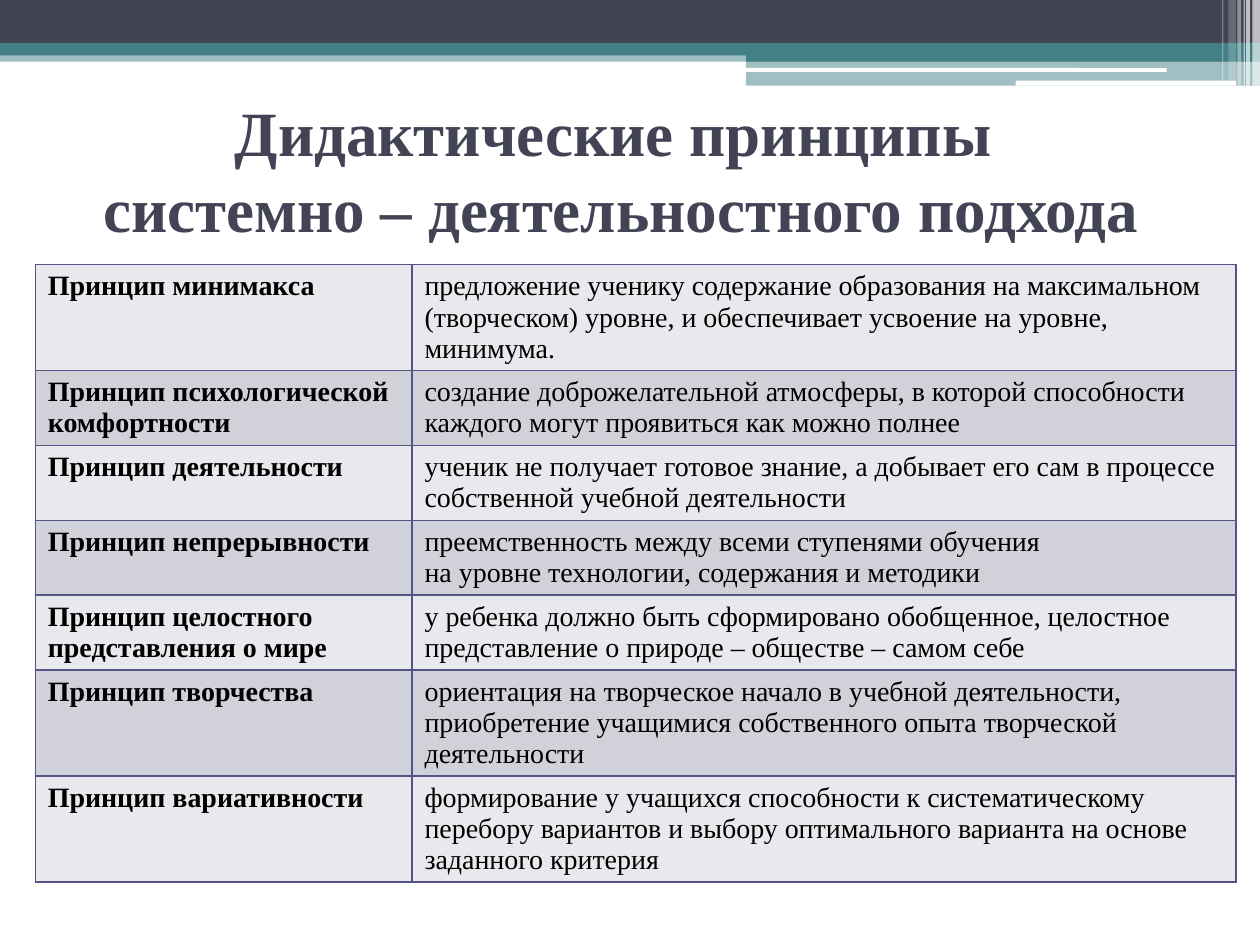
from lxml.etree import SubElement
from pptx import Presentation
from pptx.dml.color import RGBColor
from pptx.enum.shapes import MSO_SHAPE as Shape
from pptx.enum.text import MSO_ANCHOR as Anchor, MSO_AUTO_SIZE as Fit, PP_ALIGN as Align
from pptx.oxml.ns import qn
from pptx.util import Inches, Pt

FONT = "Times New Roman"
DARK = RGBColor(0x42, 0x44, 0x56)
TEAL = RGBColor(0x43, 0x80, 0x86)
WHITE = RGBColor(0xFF, 0xFF, 0xFF)
BLACK = RGBColor(0x00, 0x00, 0x00)
EDGE = RGBColor(0x53, 0x54, 0x8A)
STRIPES = (RGBColor(0xE9, 0xE9, 0xED), RGBColor(0xD1, 0xD1, 0xDA))

TITLE = ("Дидактические принципы ", "системно – деятельностного подхода")

# Each principle: its name, then the paragraphs that explain it
RULES = [
    ("Принцип минимакса",
     ["предложение ученику содержание образования на максимальном (творческом) уровне, "
      "и обеспечивает усвоение на уровне, минимума."]),
    ("Принцип психологической комфортности",
     ["создание доброжелательной атмосферы, в которой способности каждого могут "
      "проявиться как можно полнее"]),
    ("Принцип деятельности",
     ["ученик не получает готовое знание, а добывает его сам в процессе собственной "
      "учебной деятельности"]),
    ("Принцип непрерывности",
     ["преемственность между всеми ступенями обучения",
      "на уровне технологии, содержания и методики"]),
    ("Принцип целостного представления о мире",
     ["у ребенка должно быть сформировано обобщенное, целостное представление о природе "
      "– обществе – самом себе"]),
    ("Принцип творчества",
     ["ориентация на творческое начало в учебной деятельности, приобретение учащимися "
      "собственного опыта творческой деятельности"]),
    ("Принцип вариативности",
     ["формирование у учащихся способности к систематическому перебору вариантов и выбору "
      "оптимального варианта на основе заданного критерия"]),
]

# Left, top, width, height, colour, opacity in percent
BANDS = [
    (0, 0.4, 10, 0.09, TEAL, 50),
    (0, 0, 10, 0.34, DARK, 100),
    (0, 0.34, 10, 0.1, TEAL, 100),
    (5.92, 0.39, 4.08, 0.1, TEAL, 100),
    (5.92, 0.48, 4.08, 0.2, TEAL, 50),
]
LINES = [
    (5.91, 0.54, 3.35, 0.03, WHITE, 100),
    (8.06, 0.64, 1.75, 0.04, WHITE, 100),
]
# Left, width, height, opacity of the upright strips
STRIPS = [
    (9.94, 0.06, 0.68, 65),
    (9.89, 0.03, 0.68, 65),
    (9.87, 0.01, 0.68, 60),
    (9.82, 0.03, 0.68, 40),
    (9.75, 0.06, 0.64, 20),
    (9.7, 0.01, 0.64, 30),
]


def add_bar(slide, kind, left, top, width, height, color, alpha):
    bar = slide.shapes.add_shape(
        kind, Inches(left), Inches(top), Inches(width), Inches(height))
    bar.shadow.inherit = False
    bar.line.fill.background()
    bar.fill.solid()
    bar.fill.fore_color.rgb = color
    if alpha < 100:
        tint = bar.fill._xPr.find(qn("a:solidFill"))[0]
        SubElement(tint, qn("a:alpha"), val=str(alpha * 1000))


def add_header(slide, x, y):
    """Place the decorative bands with their top left corner at x, y."""
    strips = [(left, 0, width, height, WHITE, alpha)
              for left, width, height, alpha in STRIPS]
    groups = [(Shape.RECTANGLE, BANDS), (Shape.ROUNDED_RECTANGLE, LINES),
              (Shape.RECTANGLE, strips)]
    for kind, bars in groups:
        for left, top, *rest in bars:
            add_bar(slide, kind, x + left, y + top, *rest)


def add_run(para, text, size, color, bold):
    run = para.add_run()
    run.text = text
    font = run.font
    font.name, font.size, font.bold = FONT, Pt(size), bold
    font.color.rgb = color


def add_title(slide, x, y, width, height):
    title = slide.shapes.title
    title.left, title.top = Inches(x), Inches(y)
    title.width, title.height = Inches(width), Inches(height)
    frame = title.text_frame
    frame.word_wrap = True
    frame.auto_size = Fit.NONE
    frame.vertical_anchor = Anchor.MIDDLE
    para = frame.paragraphs[0]
    para.alignment = Align.CENTER
    for i, line in enumerate(TITLE):
        if i:
            para.add_line_break()
        add_run(para, line, 36, DARK, True)


def set_edges(cell):
    props = cell._tc.get_or_add_tcPr()
    for side in ("lnL", "lnR", "lnT", "lnB"):
        line = SubElement(props, qn(f"a:{side}"), w=str(Pt(1)))
        fill = SubElement(line, qn("a:solidFill"))
        SubElement(fill, qn("a:srgbClr"), val=str(EDGE))


def fill_cell(cell, texts, color, bold):
    set_edges(cell)
    cell.fill.solid()
    cell.fill.fore_color.rgb = color
    frame = cell.text_frame
    for i, text in enumerate(texts):
        para = frame.add_paragraph() if i else frame.paragraphs[0]
        add_run(para, text, 16, BLACK, bold)


def add_rules(slide, x, y, width):
    """Place the table of principles; rows grow to fit their text."""
    row, first = 0.41, 2.99
    table = slide.shapes.add_table(
        len(RULES), 2, Inches(x), Inches(y),
        Inches(width), Inches(row * len(RULES))).table
    table.first_row = table.horz_banding = False
    table.columns[0].width = Inches(first)
    table.columns[1].width = Inches(width - first)
    for i, (name, texts) in enumerate(RULES):
        table.rows[i].height = Inches(row)
        color = STRIPES[i % 2]
        fill_cell(table.cell(i, 0), [name], color, True)
        fill_cell(table.cell(i, 1), texts, color, False)


def main():
    deck = Presentation()
    deck.slide_width, deck.slide_height = Inches(10), Inches(7.5)
    slide = deck.slides.add_slide(deck.slide_layouts[5])
    add_header(slide, 0, 0)
    add_title(slide, 0.43, 0.76, 9, 1.17)
    add_rules(slide, 0.28, 2.1, 9.53)
    deck.save("out.pptx")


if __name__ == "__main__":
    main()
